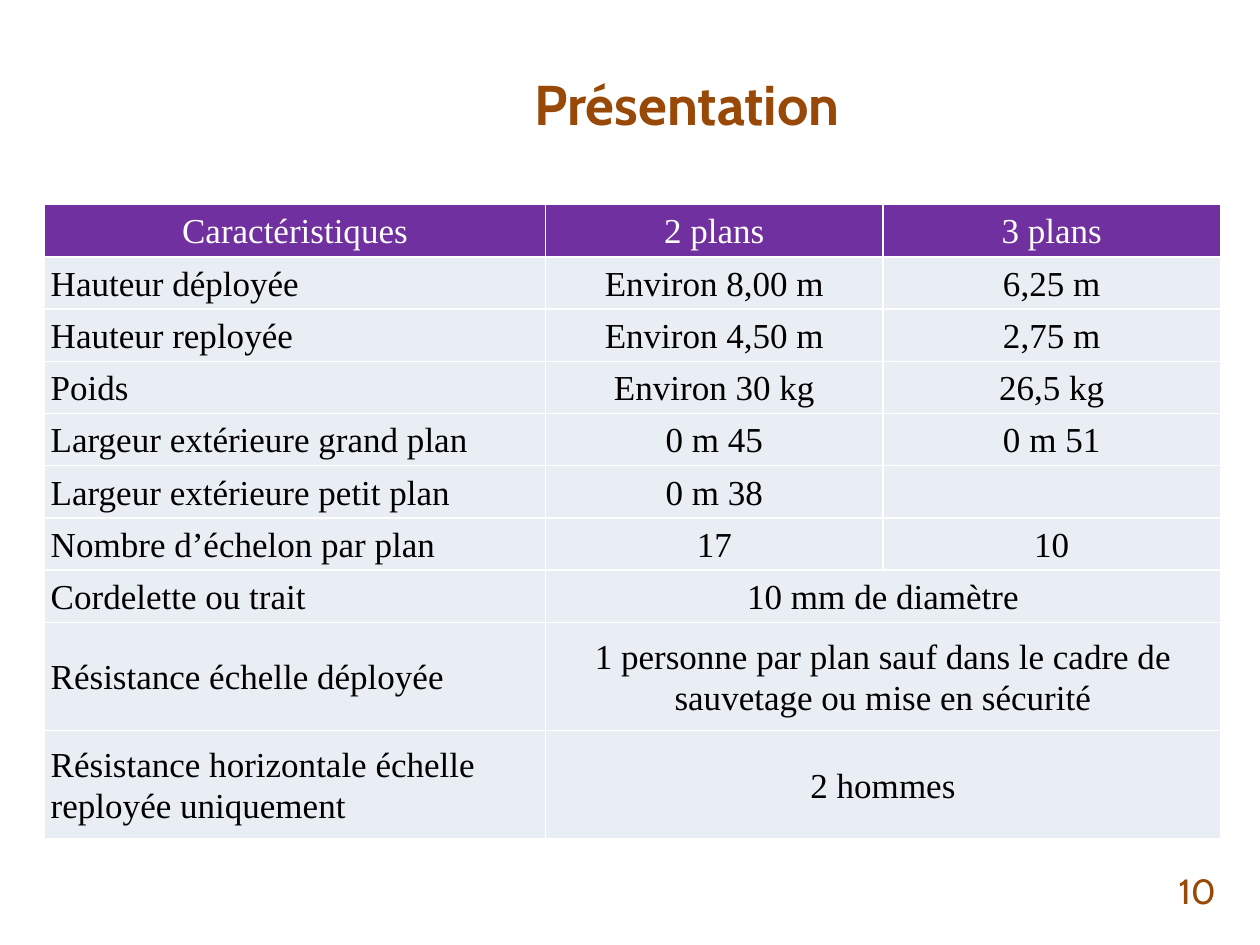
from dataclasses import dataclass

import lxml.etree
import pptx
import pptx.dml.color
import pptx.enum.text
import pptx.oxml.ns
import pptx.util

Pt = pptx.util.Pt
RGBColor = pptx.dml.color.RGBColor
Align = pptx.enum.text.PP_ALIGN
MIDDLE = pptx.enum.text.MSO_ANCHOR.MIDDLE

BROWN = RGBColor(0x98, 0x48, 0x07)
PURPLE = RGBColor(0x70, 0x30, 0xA0)
PALE = RGBColor(0xE9, 0xED, 0xF4)
WHITE = RGBColor(0xFF, 0xFF, 0xFF)
BLACK = RGBColor(0x00, 0x00, 0x00)

CELL_FORMAT = {
    "margin_left": Pt(3.6), "margin_right": Pt(3.6),
    "margin_top": Pt(0), "margin_bottom": Pt(0),
    "vertical_anchor": MIDDLE,
}
CELL_PARAGRAPH = {"line_spacing": 1.07, "space_after": Pt(8)}
CELL_FONT = {"name": "Times New Roman", "size": Pt(20)}

COLUMN_WIDTHS = (286.4, 192.8, 192.8)
ROW_HEIGHT, TALL_ROW_HEIGHT = 29.85, 61.9


@dataclass
class Label:
    text: str
    left: float
    top: float
    width: float
    height: float
    alignment: Align
    font: dict


@dataclass
class Row:
    """A table row; a single value spans both value columns."""
    name: str
    values: tuple[str, ...]
    height: float = ROW_HEIGHT


LABELS = (
    Label("Présentation", 87.8, 21.6, 609.8, 74.2, Align.CENTER,
          {"name": "Cabin", "size": Pt(32), "bold": True}),
    Label("10", 534.2, 494.6, 167.8, 28.8, Align.RIGHT,
          {"name": "Cabin", "size": Pt(20)}),
)

ROWS = (
    Row("Caractéristiques", ("2 plans", "3 plans")),
    Row("Hauteur déployée", ("Environ 8,00 m", "6,25 m")),
    Row("Hauteur reployée", ("Environ 4,50 m", "2,75 m")),
    Row("Poids", ("Environ 30 kg", "26,5 kg")),
    Row("Largeur extérieure grand plan", ("0 m 45", "0 m 51")),
    Row("Largeur extérieure petit plan", ("0 m 38", "")),
    Row("Nombre d’échelon par plan", ("17", "10")),
    Row("Cordelette ou trait", ("10 mm de diamètre",)),
    Row("Résistance échelle déployée",
        ("1 personne par plan sauf dans le cadre de sauvetage ou mise en sécurité",),
        TALL_ROW_HEIGHT),
    Row("Résistance horizontale échelle reployée uniquement", ("2 hommes",),
        TALL_ROW_HEIGHT),
)


def apply_format(target, values: dict) -> None:
    for name, value in values.items():
        setattr(target, name, value)


def write_text(paragraph, text: str, alignment: Align, font: dict, color: RGBColor) -> None:
    paragraph.alignment = alignment
    run = paragraph.add_run()
    run.text = text
    apply_format(run.font, font)
    run.font.color.rgb = color


def add_label(slide, label: Label) -> None:
    shape = slide.shapes.add_textbox(
        Pt(label.left), Pt(label.top), Pt(label.width), Pt(label.height))
    frame = shape.text_frame
    apply_format(frame, {"word_wrap": True, "vertical_anchor": MIDDLE})
    write_text(frame.paragraphs[0], label.text, label.alignment, label.font, BROWN)


def add_borders(cell, color: RGBColor) -> None:
    properties = cell._tc.get_or_add_tcPr()
    qn = pptx.oxml.ns.qn
    for side in ("a:lnL", "a:lnR", "a:lnT", "a:lnB"):
        line = lxml.etree.SubElement(properties, qn(side), w=str(Pt(1)))
        fill = lxml.etree.SubElement(line, qn("a:solidFill"))
        lxml.etree.SubElement(fill, qn("a:srgbClr"), val=str(color))


def fill_cell(cell, text: str, alignment: Align, color: RGBColor, background: RGBColor) -> None:
    apply_format(cell, CELL_FORMAT)
    add_borders(cell, WHITE)
    cell.fill.solid()
    cell.fill.fore_color.rgb = background
    if text:
        paragraph = cell.text_frame.paragraphs[0]
        apply_format(paragraph, CELL_PARAGRAPH)
        write_text(paragraph, text, alignment, CELL_FONT, color)


def add_characteristics_table(slide, rows: tuple[Row, ...]) -> None:
    table = slide.shapes.add_table(
        len(rows), len(COLUMN_WIDTHS), Pt(25.4), Pt(116.9),
        Pt(sum(COLUMN_WIDTHS)), Pt(sum(row.height for row in rows))).table
    apply_format(table, {"first_row": False, "horz_banding": False})
    for column, width in zip(table.columns, COLUMN_WIDTHS):
        column.width = Pt(width)

    for row_index, row in enumerate(rows):
        table.rows[row_index].height = Pt(row.height)
        header = row_index == 0
        color, background = (WHITE, PURPLE) if header else (BLACK, PALE)
        if len(row.values) == 1:
            table.cell(row_index, 1).merge(table.cell(row_index, 2))
        texts = (row.name, *row.values, "")[:len(COLUMN_WIDTHS)]
        for column_index, text in enumerate(texts):
            centered = header or column_index > 0
            fill_cell(table.cell(row_index, column_index), text,
                      Align.CENTER if centered else Align.LEFT, color, background)


def main() -> None:
    presentation = pptx.Presentation()
    apply_format(presentation, {"slide_width": Pt(720), "slide_height": Pt(540)})
    slide = presentation.slides.add_slide(presentation.slide_layouts[6])

    # Title and page number
    for label in LABELS:
        add_label(slide, label)

    # Ladder characteristics
    add_characteristics_table(slide, ROWS)

    presentation.save("out.pptx")


if __name__ == "__main__":
    main()
